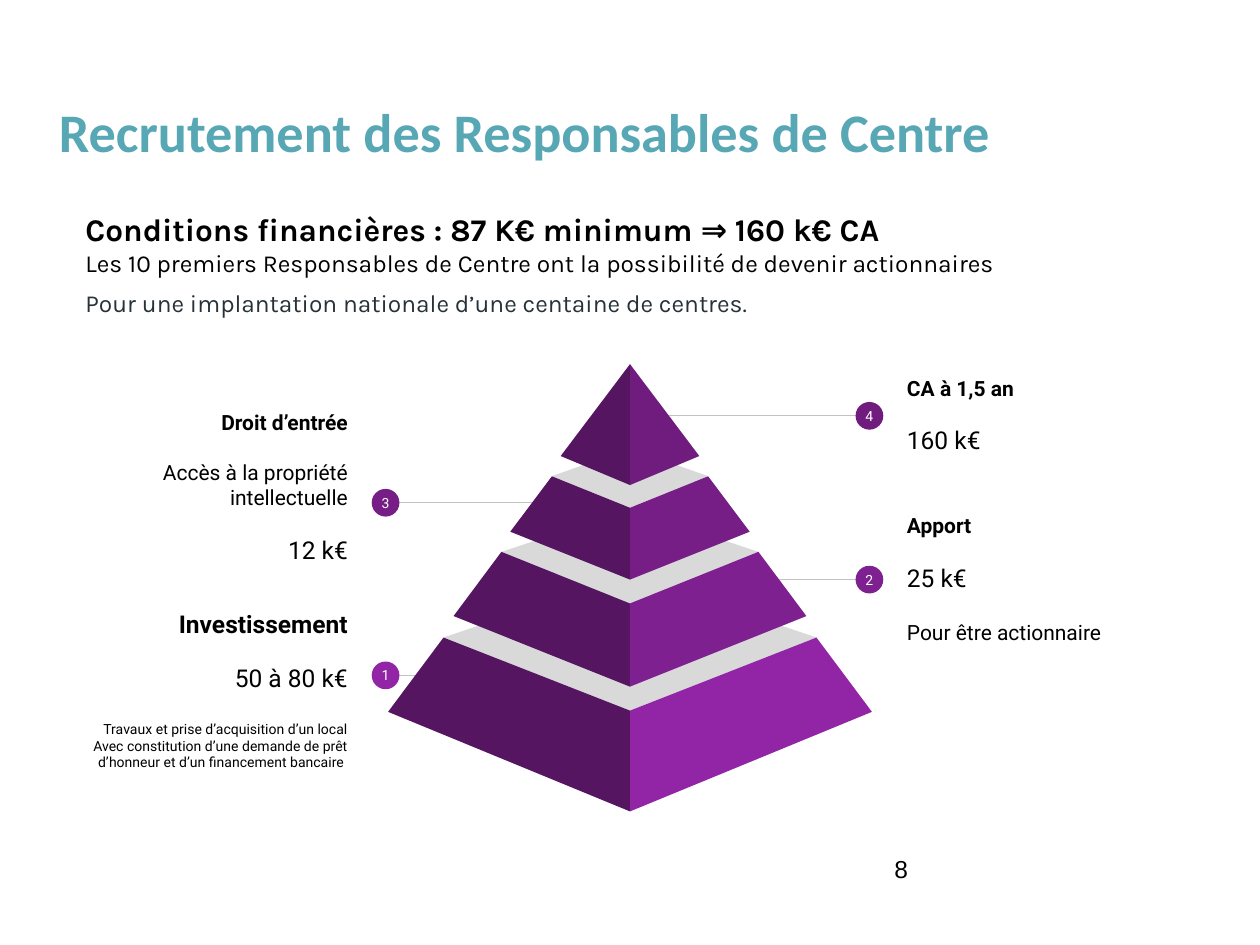
from lxml.etree import SubElement
from pptx import Presentation
from pptx.dml.color import RGBColor
from pptx.enum.shapes import MSO_CONNECTOR, MSO_SHAPE
from pptx.enum.text import MSO_ANCHOR, PP_ALIGN
from pptx.oxml.ns import qn
from pptx.util import Inches, Pt

TEAL = RGBColor(0x57, 0xA7, 0xB5)
SLATE = RGBColor(0x26, 0x32, 0x38)
BLACK = RGBColor(0, 0, 0)
WHITE = RGBColor(0xFF, 0xFF, 0xFF)
LINE_GREY = RGBColor(0xC2, 0xC2, 0xC2)
LID_GREY = RGBColor(0xD9, 0xD9, 0xD9)
DARK = RGBColor(0x55, 0x15, 0x61)
PURPLES = {
    1: RGBColor(0x92, 0x25, 0xA5),
    2: RGBColor(0x7F, 0x20, 0x90),
    3: RGBColor(0x76, 0x1E, 0x86),
    4: RGBColor(0x70, 0x1C, 0x7F),
}
BADGE = 0.22


def add_paragraph(tf, text, first=False, font="Roboto", size=12, bold=False,
                  color=BLACK, align=PP_ALIGN.LEFT, before=0):
    p = tf.paragraphs[0] if first else tf.add_paragraph()
    p.alignment = align
    p.space_before = Pt(before)
    r = p.add_run()
    r.text = text
    r.font.name = font
    r.font.size = Pt(size)
    r.font.bold = bold
    r.font.color.rgb = color


def add_text(s, box, lines, anchor=MSO_ANCHOR.TOP, inset_y=0.1, **common):
    tf = s.shapes.add_textbox(*map(Inches, box)).text_frame
    tf.word_wrap = True
    tf.vertical_anchor = anchor
    tf.margin_left = tf.margin_right = Inches(0.1)
    tf.margin_top = tf.margin_bottom = Inches(inset_y)
    for i, (text, fmt) in enumerate(lines):
        add_paragraph(tf, text, first=i == 0, **{**common, **fmt})


def add_header(s, box):
    x, y, w, h = box
    add_text(s, (x, y, w, 1.04),
             [("Recrutement des Responsables de Centre", {})],
             anchor=MSO_ANCHOR.BOTTOM, font="Calibri", size=31, bold=True, color=TEAL)
    add_text(s, (x + 0.21, y + 1.21, 8.9, h - 1.21), [
        ("Conditions financières : 87 K€ minimum ⇒ 160 k€ CA", {"size": 18, "bold": True}),
        ("Les 10 premiers Responsables de Centre ont la possibilité de devenir actionnaires", {}),
        ("Pour une implantation nationale d’une centaine de centres.",
         {"color": SLATE, "before": 6}),
    ], font="Karla", size=14)


def add_callout(s, box, number, badge_x, badge_y, line_x, lines, align):
    add_text(s, box, lines, anchor=MSO_ANCHOR.MIDDLE, align=align)
    mid_y = Inches(badge_y + BADGE / 2)
    line = s.shapes.add_connector(MSO_CONNECTOR.STRAIGHT, Inches(line_x), mid_y,
                                  Inches(badge_x + BADGE / 2), mid_y)
    line.line.color.rgb = LINE_GREY
    line.line.width = Pt(0.75)
    SubElement(line._element.spPr, qn("a:effectLst"))
    badge = s.shapes.add_shape(MSO_SHAPE.OVAL, Inches(badge_x), Inches(badge_y),
                               Inches(BADGE), Inches(BADGE))
    badge.shadow.inherit = False
    badge.fill.solid()
    badge.fill.fore_color.rgb = PURPLES[number]
    badge.line.fill.background()
    tf = badge.text_frame
    tf.word_wrap = False
    tf.vertical_anchor = MSO_ANCHOR.MIDDLE
    tf.margin_left = tf.margin_right = tf.margin_top = tf.margin_bottom = 0
    add_paragraph(tf, str(number), first=True, size=8, color=WHITE, align=PP_ALIGN.CENTER)


def add_polygon(s, points, color):
    start, *rest = [(Inches(x), Inches(y)) for x, y in points]
    builder = s.shapes.build_freeform(*start)
    builder.add_line_segments(rest, close=True)
    sp = builder.convert_to_shape()
    sp.shadow.inherit = False
    sp.fill.solid()
    sp.fill.fore_color.rgb = color
    sp.line.fill.background()


def add_pyramid(s, box):
    x, y, w, h = box
    cx = x + w / 2
    tiers = [
        (1, 1.67, 1.48, 2.17, 2.75, w / 2, 2.76, h),
        (2, 1.15, 1.02, 1.49, 1.9, 1.4, 2, 2.56),
        (3, 0.67, 0.62, 0.89, 1.14, 0.95, 1.33, 1.71),
        (4, 0, 0, 0, 0, 0.55, 0.73, 0.96),
    ]
    for number, back, top_w, top, top_mid, base_w, base, base_mid in tiers:
        if top_w:
            add_polygon(s, [(cx - top_w, y + top), (cx, y + top_mid),
                            (cx + top_w, y + top), (cx, y + back)], LID_GREY)
        for side, color in ((-1, DARK), (1, PURPLES[number])):
            facet = [(cx, y + top_mid), (cx, y + base_mid), (cx + side * base_w, y + base)]
            if top_w:
                facet.append((cx + side * top_w, y + top))
            add_polygon(s, facet, color)


def main():
    prs = Presentation()
    prs.slide_width, prs.slide_height = Inches(10), Inches(7.5)
    s = prs.slides.add_slide(prs.slide_layouts[6])
    add_header(s, (0.37, 0.36, 9.63, 2.33))
    add_text(s, (7, 6.73, 1, 0.3), [("8", {})], inset_y=0.05, font="Arial", size=14)

    heading = {"bold": True}
    amount = {"size": 14, "before": 14}
    left, right = PP_ALIGN.RIGHT, PP_ALIGN.LEFT
    callouts = [
        ((7.1, 4.02, 2.27, 1.15), 2, 6.79, 4.49, 6.15, [
            ("Apport", heading), ("25 k€", amount),
            ("Pour être actionnaire", {"before": 16})], right),
        ((0.59, 4.78, 2.27, 1.39), 1, 2.95, 5.25, 4.22, [
            ("Investissement", {"bold": True, "size": 14}), ("50 à 80 k€", amount),
            ("Travaux et prise d’acquisition d’un local", {"size": 8, "before": 16}),
            ("Avec constitution d’une demande de prêt d’honneur et d’un financement bancaire ",
             {"size": 8})], left),
        ((7.1, 2.72, 2.27, 1.15), 4, 6.79, 3.19, 5.29, [
            ("CA à 1,5 an", heading), ("160 k€", amount)], right),
        ((0.59, 3.17, 2.27, 1.39), 3, 2.95, 3.88, 4.22, [
            ("Droit d’entrée", heading),
            ("Accès à la propriété intellectuelle", {"before": 14}),
            ("12 k€", amount)], left),
    ]
    for callout in callouts:
        add_callout(s, *callout)
    add_pyramid(s, (3.08, 2.89, 3.84, 3.55))
    prs.save("out.pptx")


if __name__ == "__main__":
    main()
